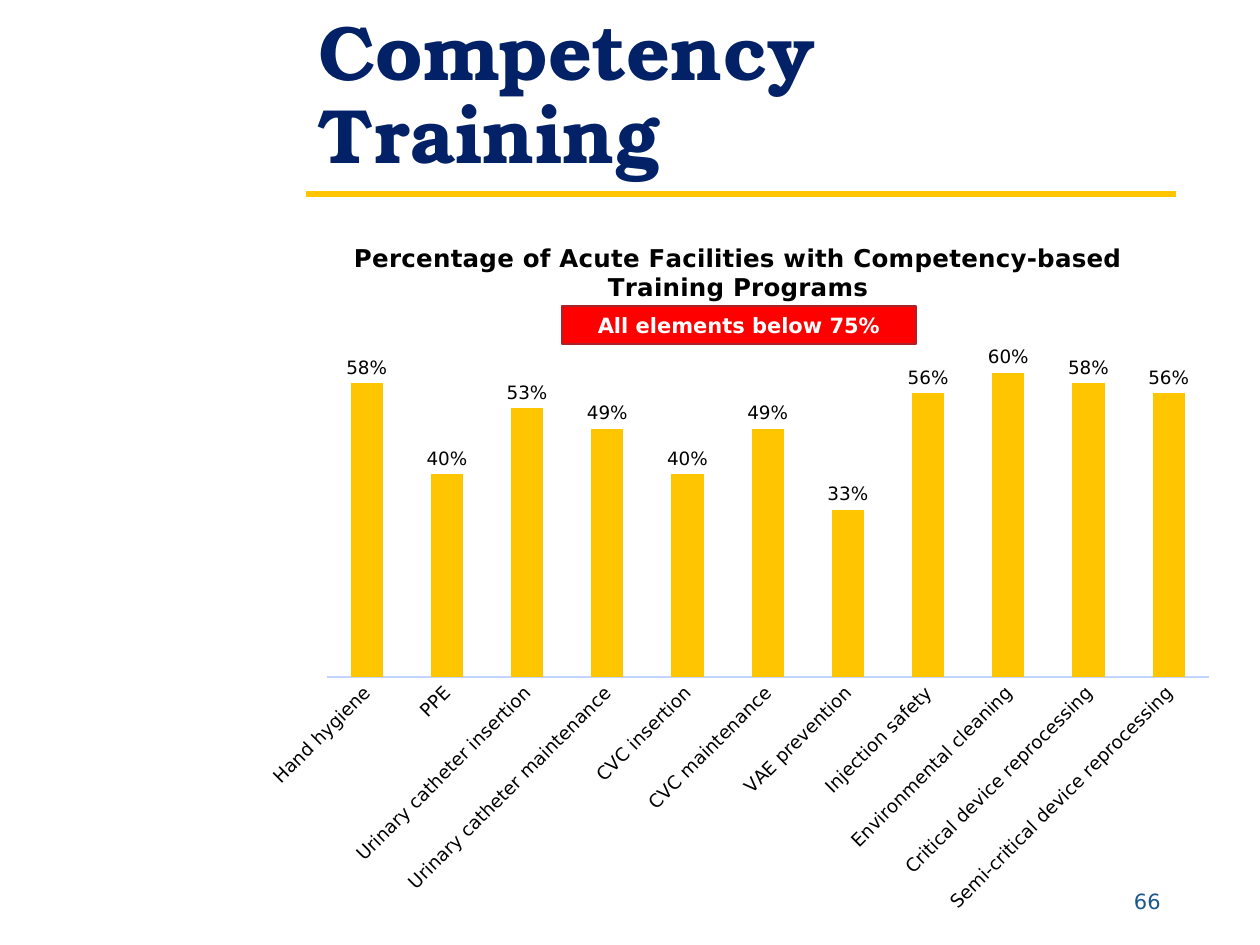
import pptx
import pptx.util
import pptx.chart.data
import pptx.dml.color
import pptx.enum.chart
import pptx.enum.shapes
import pptx.enum.text
import pptx.oxml.ns
import pptx.oxml.xmlchemy

Pt = pptx.util.Pt
RGBColor = pptx.dml.color.RGBColor
PP_ALIGN = pptx.enum.text.PP_ALIGN
MSO_ANCHOR = pptx.enum.text.MSO_ANCHOR
OxmlElement = pptx.oxml.xmlchemy.OxmlElement
qn = pptx.oxml.ns.qn

NAVY = RGBColor(0x02, 0x21, 0x67)
BLUE = RGBColor(0x1A, 0x57, 0x8E)
PALE_BLUE = RGBColor(0xC3, 0xD5, 0xFE)
GOLD = RGBColor(0xFF, 0xC6, 0x00)
RED = RGBColor(0xFF, 0x00, 0x00)
DARK_RED = RGBColor(0xAB, 0x23, 0x28)
BLACK = RGBColor(0x00, 0x00, 0x00)
WHITE = RGBColor(0xFF, 0xFF, 0xFF)

BODY_FONT = "DejaVu Sans"
TITLE_FONT = "TeX Gyre Bonum"
WIDTH, HEIGHT = 10, 7.5
LEFT, RIGHT = 2.43, 9.33

PROGRAMS = {
    "Hand hygiene": 0.58,
    "PPE": 0.40,
    "Urinary catheter insertion": 0.53,
    "Urinary catheter maintenance": 0.49,
    "CVC insertion": 0.40,
    "CVC maintenance": 0.49,
    "VAE prevention": 0.33,
    "Injection safety": 0.56,
    "Environmental cleaning": 0.60,
    "Critical device reprocessing": 0.58,
    "Semi-critical device reprocessing": 0.56,
}


def inches(*values):
    return [pptx.util.Inches(v) for v in values]


def style_font(font, size, color, bold=False, name=BODY_FONT):
    font.size = Pt(size)
    font.color.rgb = color
    font.bold = bold
    font.name = name


def write(sp, text, anchor, align, size, color, bold=False, name=BODY_FONT):
    tf = sp.text_frame
    tf.word_wrap = True
    tf.vertical_anchor = anchor
    tf.text = text
    p = tf.paragraphs[0]
    p.alignment = align
    style_font(p.runs[0].font, size, color, bold, name)
    return p


def add_text(slide, box, *style):
    return write(slide.shapes.add_textbox(*inches(*box)), *style)


def add_rule(slide, y):
    line = slide.shapes.add_connector(
        pptx.enum.shapes.MSO_CONNECTOR.STRAIGHT, *inches(LEFT, y, RIGHT, y))
    line.line.color.rgb = GOLD
    line.line.width = Pt(3)
    line._element.spPr.append(OxmlElement("a:effectLst"))


def add_callout(slide, box, text):
    sp = slide.shapes.add_shape(
        pptx.enum.shapes.MSO_SHAPE.RECTANGLE, *inches(*box))
    sp.shadow.inherit = False
    sp.fill.solid()
    sp.fill.fore_color.rgb = RED
    sp.line.color.rgb = DARK_RED
    sp.line.width = Pt(1)
    write(sp, text, MSO_ANCHOR.MIDDLE, PP_ALIGN.CENTER, 12, WHITE, True)


def place_plot(chart, **shares):
    plot_area = chart._chartSpace.chart.plotArea
    for old in plot_area.findall(qn("c:layout")):
        plot_area.remove(old)
    layout = OxmlElement("c:layout")
    manual = OxmlElement("c:manualLayout")
    settings = dict(layoutTarget="inner", xMode="edge", yMode="edge", **shares)
    for tag, value in settings.items():
        child = OxmlElement("c:" + tag)
        child.set("val", str(value))
        manual.append(child)
    layout.append(manual)
    plot_area.insert(0, layout)


def style_axes(chart):
    cat = chart.category_axis
    cat.major_tick_mark = pptx.enum.chart.XL_TICK_MARK.NONE
    cat.has_major_gridlines = False
    cat.format.line.color.rgb = PALE_BLUE
    cat.format.line.width = Pt(1)
    style_font(cat.tick_labels.font, 10.5, BLACK)
    cat._element.find(qn("c:txPr")).find(qn("a:bodyPr")).set("rot", "-2700000")
    val = chart.value_axis
    val.visible = False
    val.has_major_gridlines = False
    val.minimum_scale = 0
    val.maximum_scale = 0.7
    val.tick_labels.number_format = "0%"
    val.tick_labels.number_format_is_linked = False


def add_column_chart(slide, box, title, values):
    xl = pptx.enum.chart
    data = pptx.chart.data.CategoryChartData(number_format="0%")
    data.categories = list(values)
    data.add_series("Series 1", list(values.values()))
    chart = slide.shapes.add_chart(
        xl.XL_CHART_TYPE.COLUMN_CLUSTERED, *inches(*box), data).chart
    style_font(chart.font, 10, NAVY)
    chart.has_legend = False
    chart.has_title = True
    tf = chart.chart_title.text_frame
    tf.text = title
    style_font(tf.paragraphs[0].runs[0].font, 14, BLACK, True)

    plot = chart.plots[0]
    plot.gap_width = 150
    plot.overlap = -25
    plot.vary_by_categories = False
    fill = plot.series[0].format.fill
    fill.solid()
    fill.fore_color.rgb = GOLD
    plot.has_data_labels = True
    labels = plot.data_labels
    labels.show_value = True
    labels.number_format = "0%"
    labels.number_format_is_linked = False
    labels.position = xl.XL_LABEL_POSITION.OUTSIDE_END
    style_font(labels.font, 10.5, BLACK)
    style_axes(chart)
    place_plot(chart, x=0.08, y=0.15, w=0.9, h=0.5)


def main():
    prs = pptx.Presentation()
    prs.slide_width, prs.slide_height = inches(WIDTH, HEIGHT)
    slide = prs.slides.add_slide(prs.slide_layouts[6])
    add_rule(slide, 1.54)
    title = add_text(slide, (LEFT, 0.67, 6.88, 0.81), "Competency Training",
                     MSO_ANCHOR.BOTTOM, PP_ALIGN.LEFT, 44, NAVY, True, TITLE_FONT)
    title.line_spacing = 0.9
    add_text(slide, (7.63, 6.95, 1.68, 0.4), "66",
             MSO_ANCHOR.MIDDLE, PP_ALIGN.RIGHT, 12, BLUE)
    add_column_chart(
        slide, (1.97, 1.71, 7.78, 5.64),
        "Percentage of Acute Facilities with Competency-based Training Programs",
        PROGRAMS)
    add_callout(slide, (4.46, 2.43, 2.81, 0.3), "All elements below 75%")
    prs.save("out.pptx")


if __name__ == "__main__":
    main()
